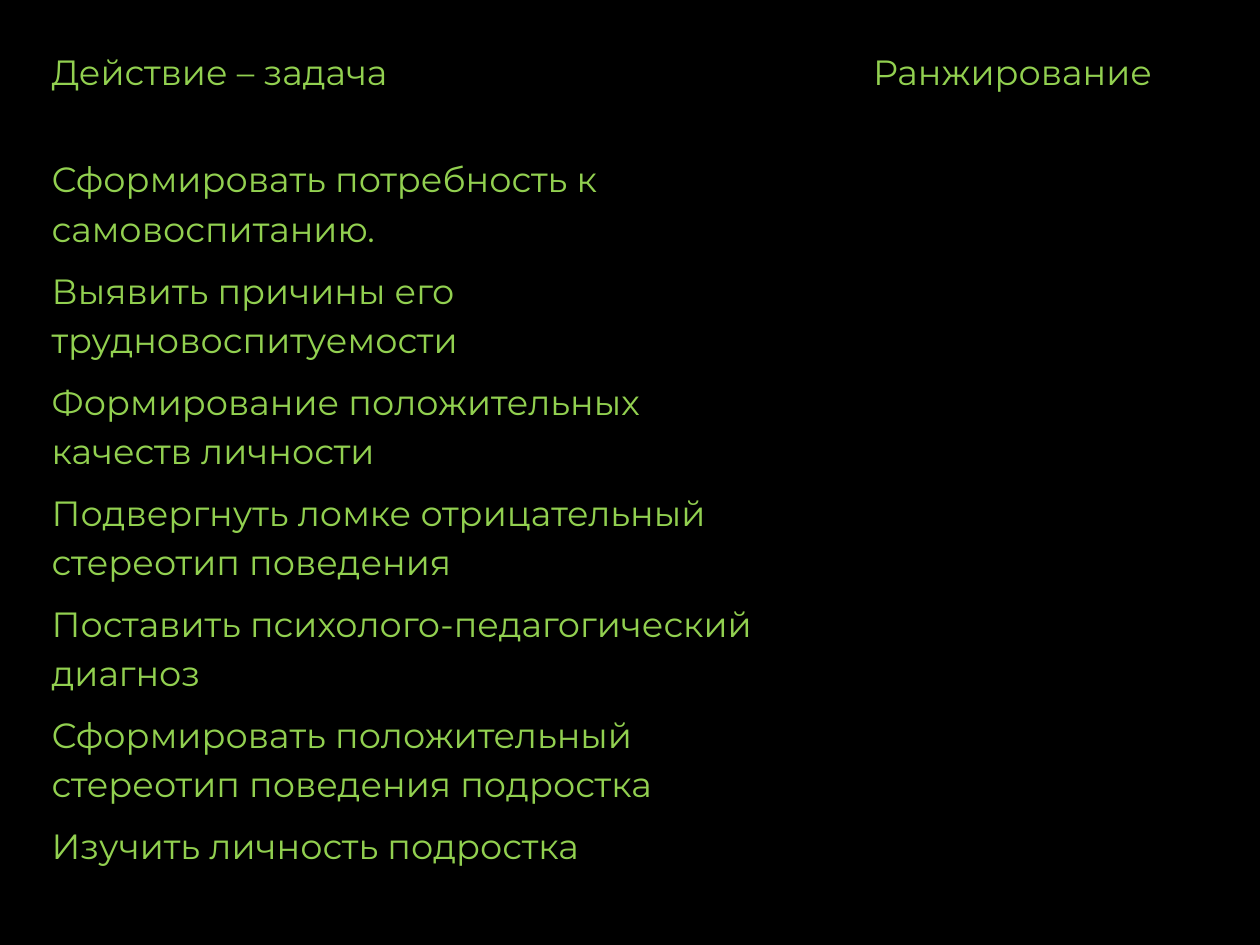
from pptx import Presentation
from pptx.dml.color import RGBColor
from pptx.oxml.ns import qn
from pptx.util import Inches, Pt

NO_STYLE_NO_GRID = "{2D5ABB26-0587-4C30-8999-92F81FD0307C}"
TASKS = [
    "Сформировать потребность к самовоспитанию.",
    "Выявить причины его трудновоспитуемости",
    "Формирование положительных качеств личности",
    "Подвергнуть ломке отрицательный стереотип поведения",
    "Поставить психолого-педагогический диагноз",
    "Сформировать положительный стереотип поведения подростка",
    "Изучить личность подростка",
]


def color(hex_string):
    return RGBColor.from_string(hex_string)


presentation = Presentation()
presentation.slide_width = Inches(10)
presentation.slide_height = Inches(7.5)
slide = presentation.slides.add_slide(presentation.slide_layouts[6])

# Black background
slide.background.fill.solid()
slide.background.fill.fore_color.rgb = color("000000")

# Table of tasks with an empty ranking column
rows = [("Действие – задача", "Ранжирование")] + [(task, "") for task in TASKS]
row_heights = [0.85] + [0.87] * 6 + [0.5]
shape = slide.shapes.add_table(
    len(rows), 2, Inches(0.31), Inches(0.31), Inches(9.22), Inches(sum(row_heights))
)
table = shape.table
table.first_row = False
table.horz_banding = False
for style_id in shape.element.iter(qn("a:tableStyleId")):
    style_id.text = NO_STYLE_NO_GRID

for column, width in zip(table.columns, (6.02, 3.2)):
    column.width = Inches(width)

for row_index, texts in enumerate(rows):
    table.rows[row_index].height = Inches(row_heights[row_index])
    for column_index, text in enumerate(texts):
        cell = table.cell(row_index, column_index)
        cell.fill.background()
        if not text:
            continue
        cell.text = text
        paragraph = cell.text_frame.paragraphs[0]
        paragraph.line_spacing = 1.15
        paragraph.font.name = "Montserrat"
        paragraph.font.size = Pt(20)
        paragraph.font.color.rgb = color("92D050")

# The ranking heading is set in from its column edge
ranking_heading = table.cell(0, 1)
ranking_heading.margin_left = Inches(0.6)
ranking_heading.text_frame.paragraphs[0].space_after = Pt(12)

presentation.save("out.pptx")
